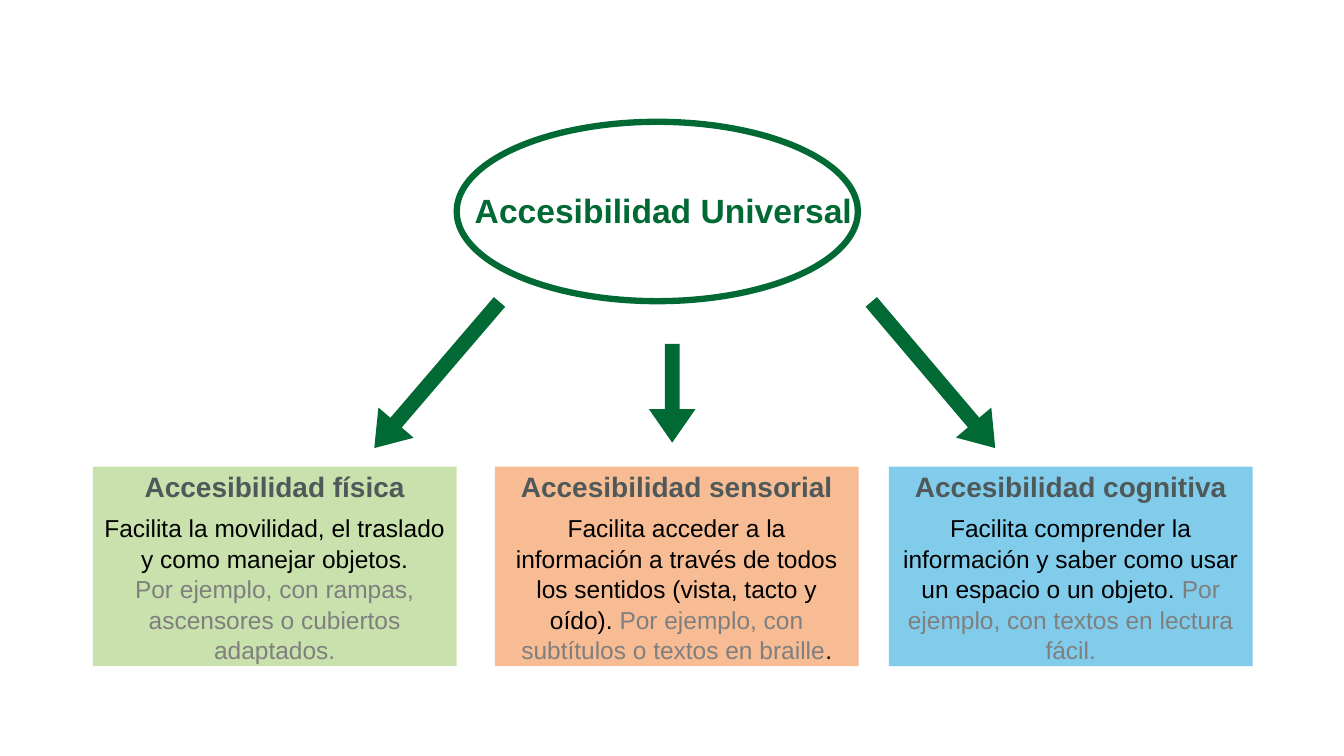
from dataclasses import dataclass

from lxml import etree
from pptx import Presentation
from pptx import util as u
from pptx.dml.color import RGBColor
from pptx.enum import shapes, text
from pptx.oxml import ns

GREEN, HEADING, BODY, EXAMPLE = "006934", "4F595A", "000000", "7F7F7F"
FONT = "Arial"


@dataclass
class Run:
    text: str
    color: str = BODY


@dataclass
class Card:
    left: float
    fill: str
    heading: str
    body: list[list[Run]]


@dataclass
class Arrow:
    center_x: float
    center_y: float
    length: float
    rotation: float


CARDS = [
    Card(2.34, "92C256", "Accesibilidad física", [
        [Run("Facilita la movilidad, el traslado y como manejar objetos.")],
        [Run("Por ejemplo, con rampas, ascensores o cubiertos adaptados.", EXAMPLE)],
    ]),
    Card(12.47, "EF7723", "Accesibilidad sensorial", [
        [Run("Facilita acceder a la información a través de todos los sentidos (vista, tacto y oído). "),
         Run("Por ejemplo, con subtítulos o textos en braille", EXAMPLE), Run(".")],
    ]),
    Card(22.4, "0098D8", "Accesibilidad cognitiva", [
        [Run("Facilita comprender la información y saber como usar un espacio o un objeto. "),
         Run("Por ejemplo, con textos en lectura fácil.", EXAMPLE)],
    ]),
]
ARROWS = [
    Arrow(16.94, 9.91, 2.49, 90),
    Arrow(11.01, 9.45, 4.85, 130.6),
    Arrow(23.52, 9.45, 4.83, 49.7),
]


def rgb(value: str) -> RGBColor:
    return RGBColor.from_string(value)


def add_shape(s, kind, left: float, top: float, width: float, height: float, fill: str | None = None):
    sp = s.shapes.add_shape(kind, u.Cm(left), u.Cm(top), u.Cm(width), u.Cm(height))
    sp.shadow.inherit = False
    sp.line.fill.background()
    if fill:
        sp.fill.solid()
        sp.fill.fore_color.rgb = rgb(fill)
    else:
        sp.fill.background()
    return sp


def set_alpha(sp, percent: int) -> None:
    color = sp.fill._xPr.find(ns.qn("a:solidFill"))[0]
    etree.SubElement(color, ns.qn("a:alpha")).set("val", str(percent * 1000))


def format_paragraph(p, size: float, bold: bool, color: str | None = None) -> None:
    p.font.name, p.font.size, p.font.bold = FONT, u.Pt(size), bold
    if color:
        p.font.color.rgb = rgb(color)


def add_title(s) -> None:
    sp = s.shapes.title
    sp.left, sp.top, sp.width, sp.height = u.Cm(11.71), u.Cm(4.67), u.Cm(10.44), u.Cm(1.27)
    tf = sp.text_frame
    tf.text = "Accesibilidad Universal"
    tf.word_wrap = True
    tf.auto_size = text.MSO_AUTO_SIZE.NONE
    tf.vertical_anchor = text.MSO_ANCHOR.TOP
    p = tf.paragraphs[0]
    p.alignment = text.PP_ALIGN.LEFT
    format_paragraph(p, 24, True, GREEN)


def add_card(s, card: Card) -> None:
    sp = add_shape(s, shapes.MSO_SHAPE.RECTANGLE, card.left, 11.76, 9.17, 5.03, card.fill)
    set_alpha(sp, 49)
    tf = sp.text_frame
    tf.word_wrap = True
    tf.vertical_anchor = text.MSO_ANCHOR.MIDDLE
    tf.margin_left = tf.margin_right = tf.margin_top = tf.margin_bottom = u.Cm(0.25)
    tf.text = card.heading
    format_paragraph(tf.paragraphs[0], 20, True, HEADING)
    for i, runs in enumerate(card.body):
        p = tf.add_paragraph()
        p.space_before = u.Pt(0 if i else 6)
        format_paragraph(p, 17.5, False)
        for run in runs:
            r = p.add_run()
            r.text = run.text
            r.font.color.rgb = rgb(run.color)
    for p in tf.paragraphs:
        p.alignment = text.PP_ALIGN.CENTER
        p.line_spacing = 1.04


def add_arrow(s, arrow: Arrow, height: float = 1.17) -> None:
    sp = add_shape(s, shapes.MSO_SHAPE.RIGHT_ARROW, arrow.center_x - arrow.length / 2,
                   arrow.center_y - height / 2, arrow.length, height, GREEN)
    sp.adjustments[0], sp.adjustments[1] = 0.32, 0.72
    sp.rotation = arrow.rotation


def main() -> None:
    """Build the universal accessibility diagram slide."""
    prs = Presentation()
    prs.slide_width, prs.slide_height = u.Cm(33.87), u.Cm(19.05)
    s = prs.slides.add_slide(prs.slide_layouts[5])
    add_title(s)
    oval = add_shape(s, shapes.MSO_SHAPE.OVAL, 11.51, 3.07, 10.11, 4.52)
    oval.line.color.rgb = rgb(GREEN)
    oval.line.width = u.Pt(4.5)
    for card in CARDS:
        add_card(s, card)
    for arrow in ARROWS:
        add_arrow(s, arrow)
    prs.save("out.pptx")


if __name__ == "__main__":
    main()
